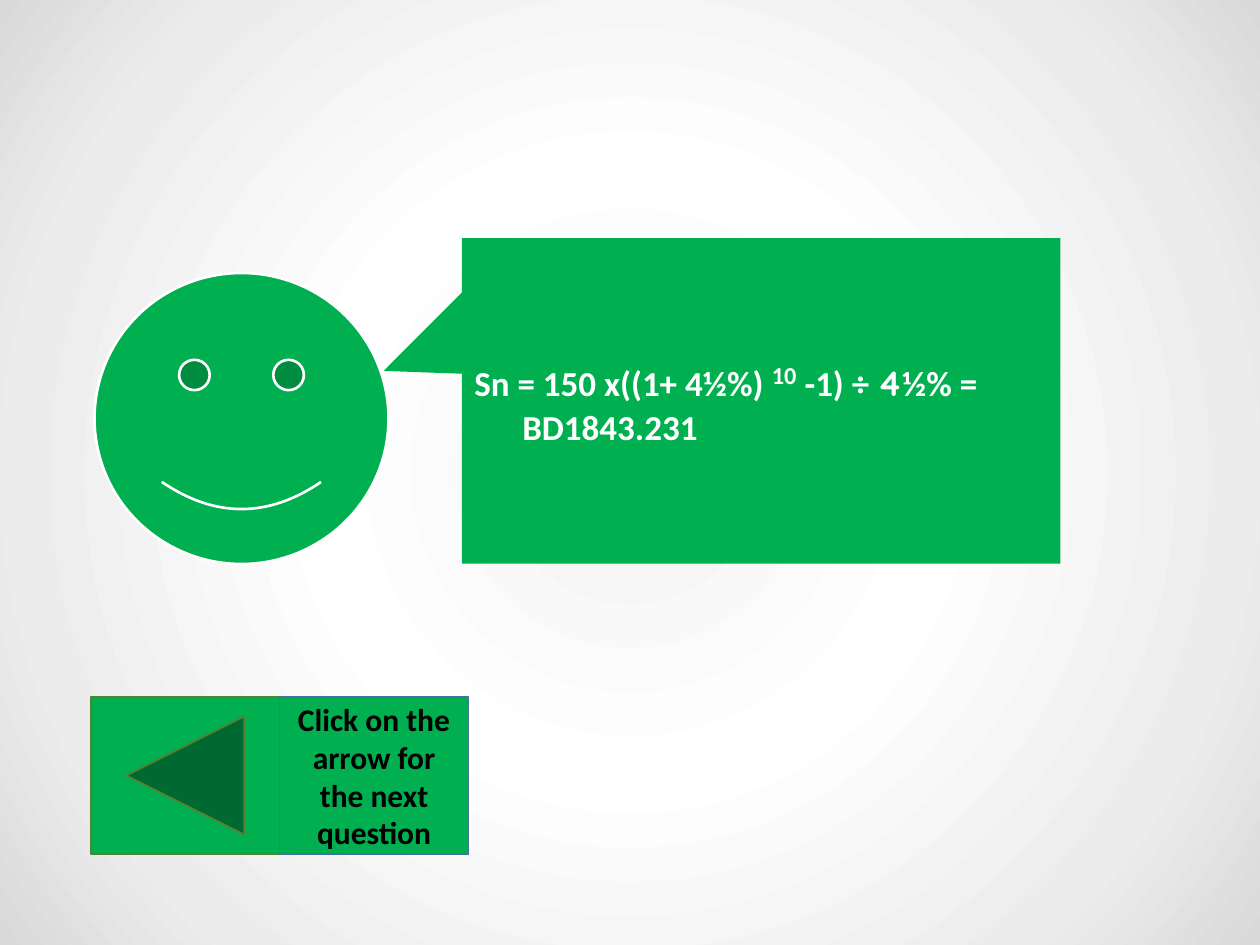
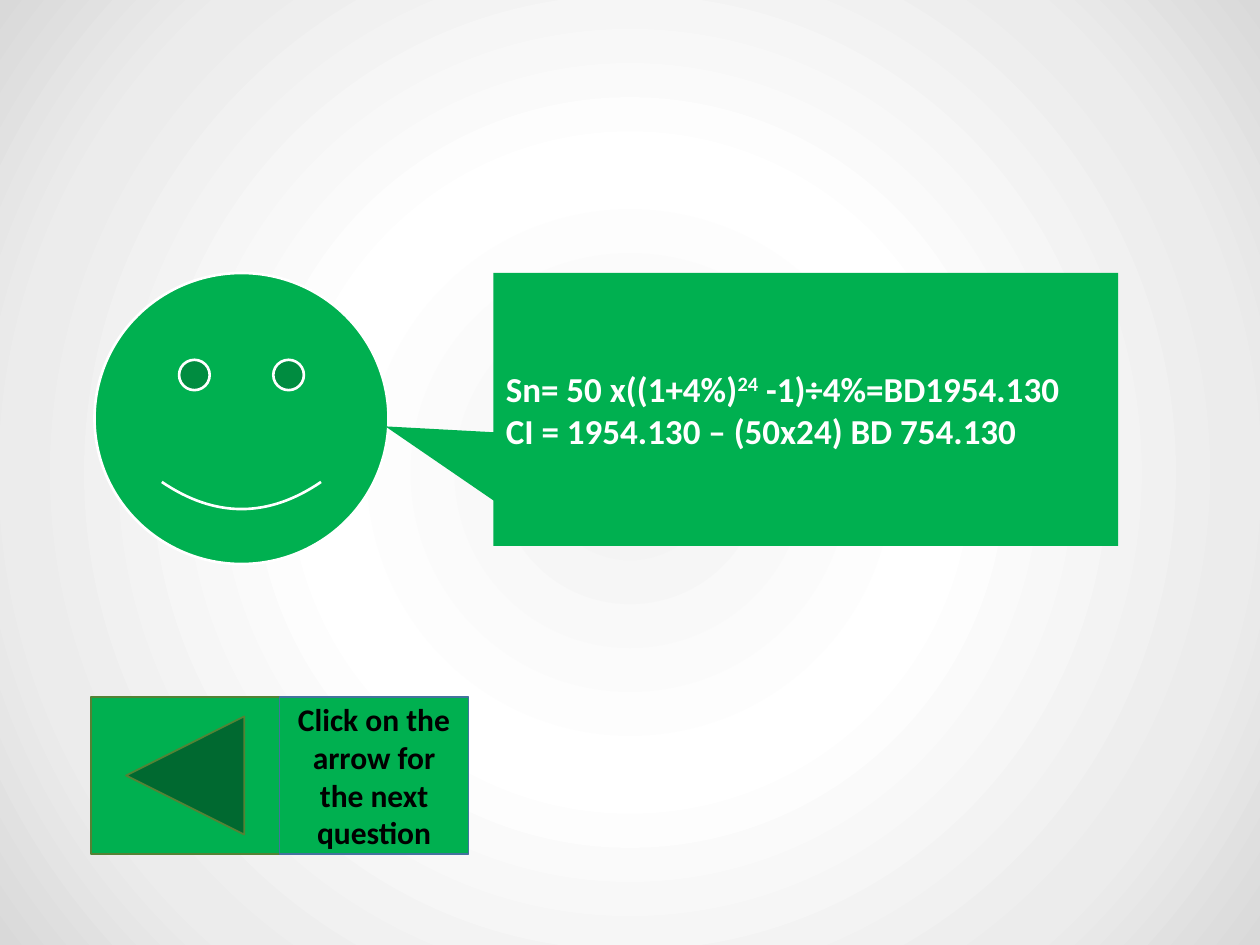
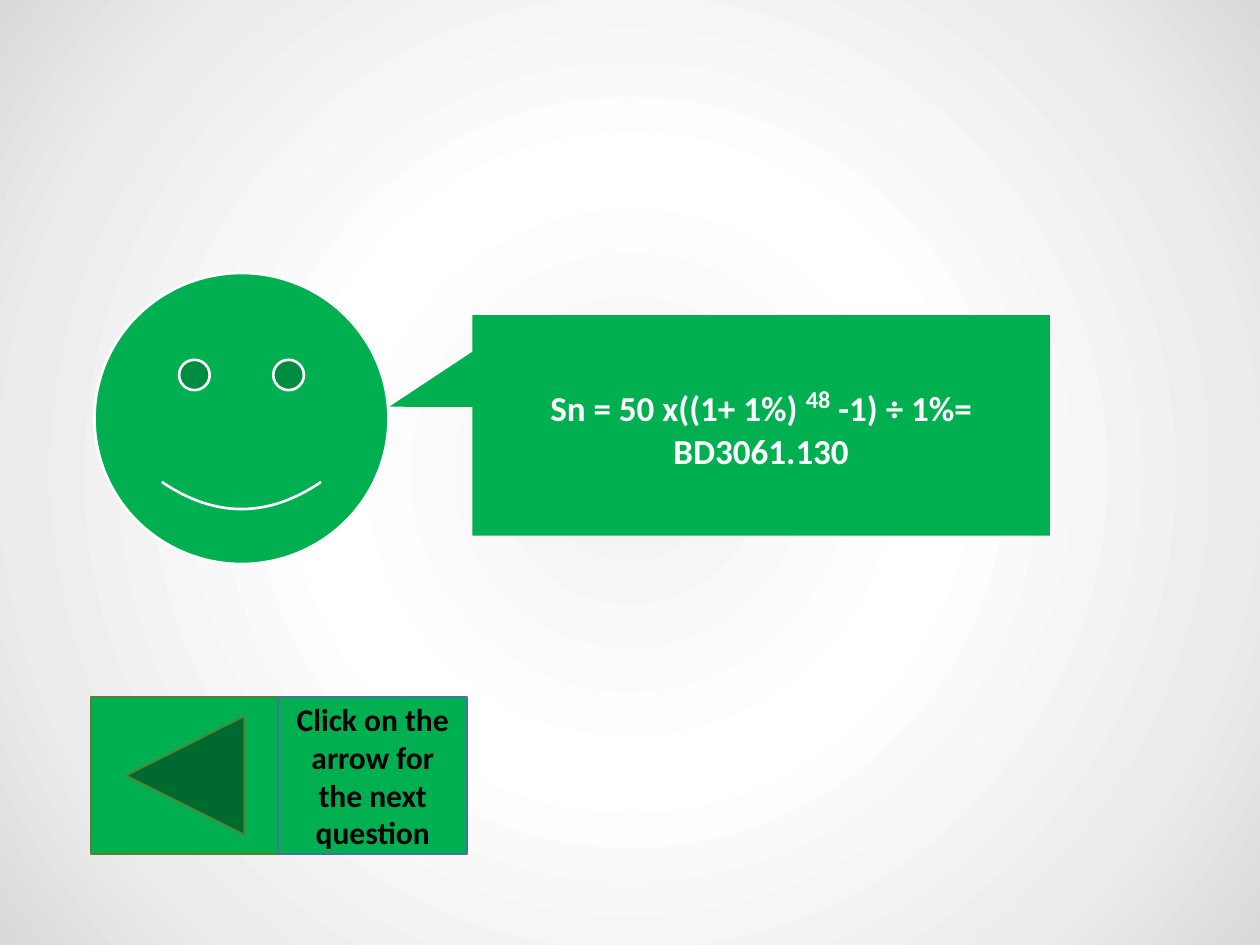
from dataclasses import dataclass

from lxml import etree
from pptx import Presentation
from pptx import util as u
from pptx.dml import color
from pptx.enum import shapes, text
from pptx.oxml import ns


@dataclass(frozen=True)
class Theme:
    green: str = "00B050"
    white: str = "FFFFFF"
    black: str = "000000"
    arrow_line: str = "548235"
    label_line: str = "43739E"
    backdrop: tuple = ((0, "F2F2F2"), (39, "FFFFFF"), (78, "ECECEC"), (100, "D9D9D9"))
    font: str = "Calibri"
    digit_font: str = "Quicksand"
    answer_size: int = 20
    power_size: int = 24
    label_size: int = 18


theme = Theme()

presentation = Presentation()
presentation.slide_width = u.Inches(10)
presentation.slide_height = u.Inches(7.5)
column = presentation.slide_width / 120
row = presentation.slide_height / 90


def add_block(slide, kind, box, adjustments=(), line=None, line_width=1):
    """Add a green shape; box is left, top, width, height in grid units."""
    left, top, width, height = box
    shape = slide.shapes.add_shape(
        kind, round(left * column), round(top * row), round(width * column), round(height * row))
    shape.shadow.inherit = False
    shape.fill.solid()
    shape.fill.fore_color.rgb = color.RGBColor.from_string(theme.green)
    if line:
        shape.line.color.rgb = color.RGBColor.from_string(line)
        shape.line.width = u.Pt(line_width)
    else:
        shape.line.fill.background()
    for index, value in enumerate(adjustments):
        shape.adjustments[index] = value
    shape.text_frame.word_wrap = True
    shape.text_frame.vertical_anchor = text.MSO_ANCHOR.MIDDLE
    return shape


def style_run(run, size, rgb, font=theme.font):
    run.font.name = font
    run.font.size = u.Pt(size)
    run.font.bold = True
    run.font.color.rgb = color.RGBColor.from_string(rgb)


# Shared backdrop: a circular gradient on the master
master = presentation.slide_master
master.background.fill.gradient()
gradient = master.element.find(".//" + ns.qn("a:gradFill"))
for child in list(gradient):
    gradient.remove(child)
stops = etree.SubElement(gradient, ns.qn("a:gsLst"))
for position, rgb in theme.backdrop:
    stop = etree.SubElement(stops, ns.qn("a:gs"), pos=str(position * 1000))
    etree.SubElement(stop, ns.qn("a:srgbClr"), val=rgb)
circle = etree.SubElement(gradient, ns.qn("a:path"), path="circle")
etree.SubElement(circle, ns.qn("a:fillToRect"), {side: "50000" for side in "ltrb"})

# Answers: each paragraph is a list of (words, role) runs
left, center = text.PP_ALIGN.LEFT, text.PP_ALIGN.CENTER
answers = [
    dict(box=(44, 22.68, 57, 31), tail=(-0.631, -0.092), align=left, hanging=0.38,
         power_size=theme.power_size, label_left=26.64,
         paragraphs=[[("Sn = 150 x((1+ 4½%) ", ""), ("10", "power"), (" -1) ÷ ", ""),
                      ("4", "digit"), ("½% = BD1843.231", "")]]),
    dict(box=(47, 26, 59.5, 26), tail=(-0.673, 0.062), align=left, hanging=0,
         power_size=theme.answer_size, label_left=26.64,
         paragraphs=[[("Sn= 50 x((1+4%)", ""), ("24", "power"), (" -1)÷4%=BD1954.130", "")],
                     [("CI = 1954.130 – (50x24) BD 754.130", "")]]),
    dict(box=(45, 30, 55, 21), tail=(-0.644, -0.084), align=center, hanging=0,
         power_size=theme.power_size, label_left=26.52,
         paragraphs=[[("Sn = 50 x((1+ 1%) ", ""), ("48", "power"),
                      (" -1) ÷ 1%= BD3061.130", "")]]),
]

for answer in answers:
    slide = presentation.slides.add_slide(presentation.slide_layouts[6])

    # Smiley and back button
    add_block(slide, shapes.MSO_SHAPE.SMILEY_FACE, (9, 26, 28, 27.72), [0.047], theme.white, 1.5)
    add_block(slide, shapes.MSO_SHAPE.ACTION_BUTTON_BACK_OR_PREVIOUS,
              (8.64, 66.36, 18, 15), line=theme.arrow_line)

    # Speech callout with the worked answer
    callout = add_block(slide, shapes.MSO_SHAPE.RECTANGULAR_CALLOUT, answer["box"], answer["tail"])
    for index, pieces in enumerate(answer["paragraphs"]):
        frame = callout.text_frame
        paragraph = frame.add_paragraph() if index else frame.paragraphs[0]
        paragraph.alignment = answer["align"]
        if answer["hanging"]:
            properties = paragraph._p.get_or_add_pPr()
            properties.set("marL", str(u.Inches(answer["hanging"])))
            properties.set("indent", str(-u.Inches(answer["hanging"])))
        for words, role in pieces:
            run = paragraph.add_run()
            run.text = words
            size = answer["power_size"] if role == "power" else theme.answer_size
            font = theme.digit_font if role == "digit" else theme.font
            style_run(run, size, theme.white, font)
            if role == "power":
                run._r.get_or_add_rPr().set("baseline", "30000")

    # Label beside the button
    label = add_block(slide, shapes.MSO_SHAPE.PENTAGON,
                      (answer["label_left"], 66.36, 18, 15), [0], theme.label_line)
    label._element.spPr.find(ns.qn("a:xfrm")).set("flipH", "1")
    label.text_frame.text = "Click on the arrow for the next question"
    paragraph = label.text_frame.paragraphs[0]
    paragraph.alignment = center
    style_run(paragraph.runs[0], theme.label_size, theme.black)

presentation.save("out.pptx")
